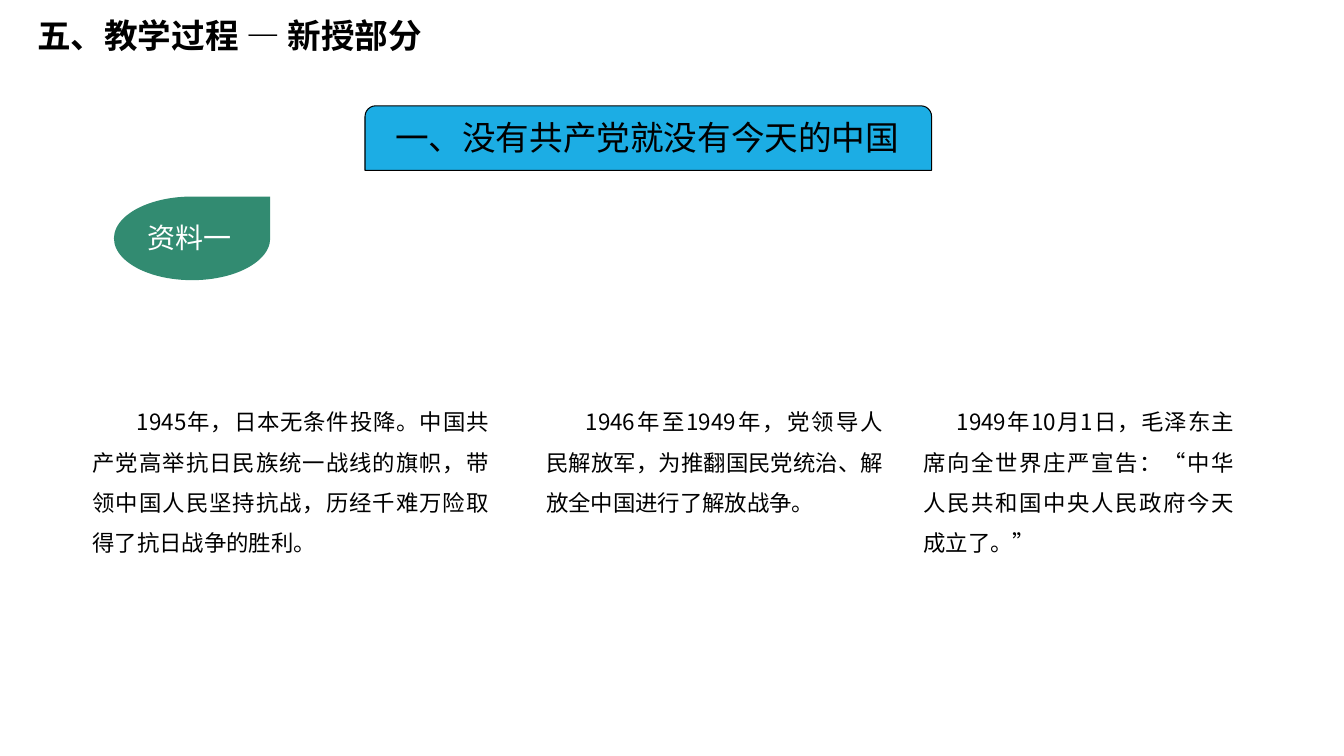
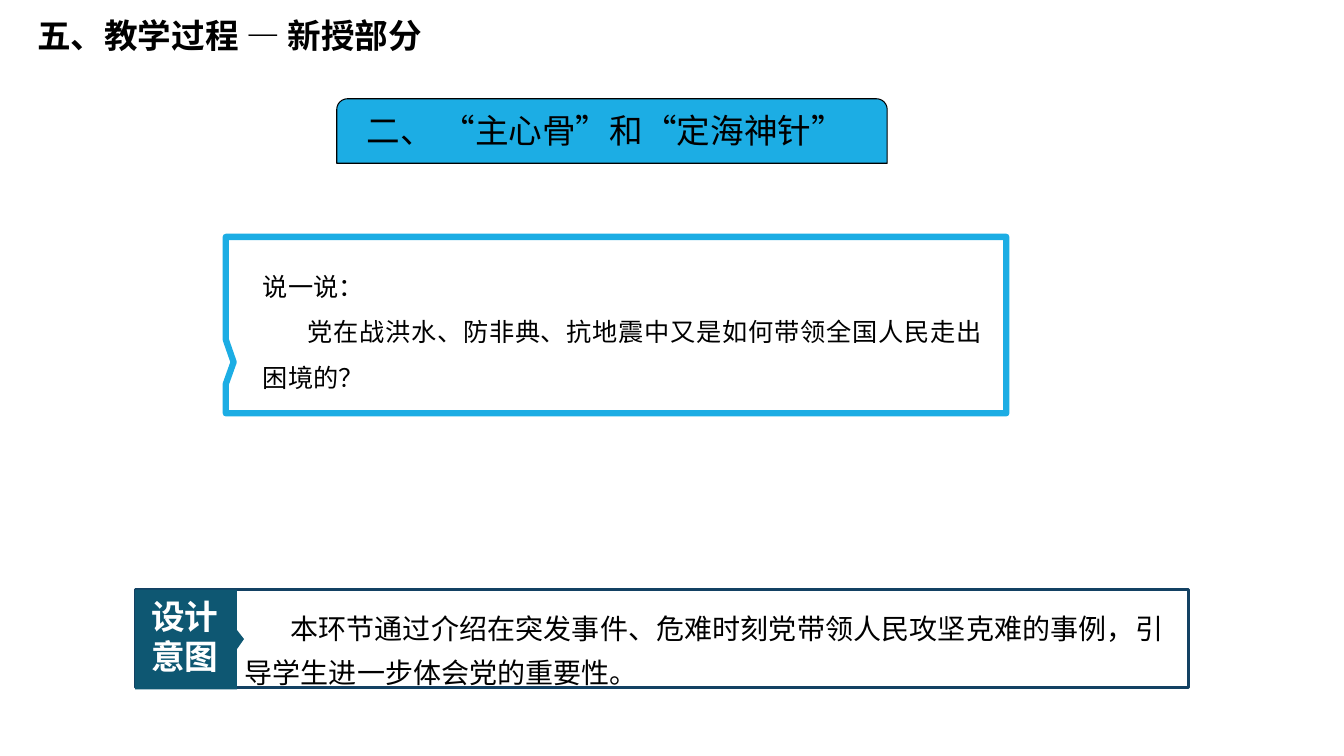
"""Build two lesson slides on the new-teaching part of a history class."""
from dataclasses import dataclass
from typing import Optional

from pptx import Presentation
from pptx import util as u
from pptx.dml.color import RGBColor
from pptx.enum import lang, shapes, text
from pptx.oxml import ns

FONT = "Noto Sans CJK SC"
TITLE = "五、教学过程 — 新授部分"
COLORS = {
    "black": "000000",
    "white": "FFFFFF",
    "sky": "1CADE4",
    "green": "328B71",
    "teal": "0E5772",
    "navy": "134163",
}


@dataclass(frozen=True)
class Frame:
    left: float
    top: float
    width: float
    height: float

    def lengths(self) -> tuple:
        return tuple(map(u.Inches, (self.left, self.top, self.width, self.height)))


@dataclass(frozen=True)
class Line:
    words: str
    indent: float = 0


@dataclass(frozen=True)
class Style:
    size: int
    color: str = "black"
    bold: bool = False
    spacing: float = 1.0
    justify: bool = False


@dataclass(frozen=True)
class Column:
    left: float
    width: float
    height: float
    line: Line


HEADING = Style(24)
COLUMN_TOP = 3.87
COLUMNS = (
    Column(0.82, 4.13, 1.72, Line(
        "1945年，日本无条件投降。中国共产党高举抗日民族统一战线的旗帜，"
        "带领中国人民坚持抗战，历经千难万险取得了抗日战争的胜利。", 0.44)),
    Column(5.32, 3.54, 1.31, Line(
        "1946年至1949年，党领导人民解放军，为推翻国民党统治、"
        "解放全中国进行了解放战争。", 0.39)),
    Column(9.06, 3.28, 1.72, Line(
        "1949年10月1日，毛泽东主席向全世界庄严宣告：“中华人民共和国"
        "中央人民政府今天成立了。”", 0.33)),
)


def rgb(name: str) -> RGBColor:
    return RGBColor.from_string(COLORS[name])


def paint(shape, fill: Optional[str], line: Optional[str] = None, weight: float = 0) -> None:
    shape.shadow.inherit = False
    if fill:
        shape.fill.solid()
        shape.fill.fore_color.rgb = rgb(fill)
    else:
        shape.fill.background()
    if line:
        shape.line.color.rgb = rgb(line)
        shape.line.width = u.Pt(weight)
    else:
        shape.line.fill.background()


def add_box(page, frame: Frame, style: Style, *lines: Line) -> None:
    box = page.shapes.add_textbox(*frame.lengths())
    body = box.text_frame
    body.word_wrap = True
    body.auto_size = text.MSO_AUTO_SIZE.SHAPE_TO_FIT_TEXT
    for index, line in enumerate(lines):
        para = body.add_paragraph() if index else body.paragraphs[0]
        para.line_spacing = style.spacing
        para.alignment = text.PP_ALIGN.JUSTIFY if style.justify else text.PP_ALIGN.LEFT
        if line.indent:
            para._p.get_or_add_pPr().set("indent", str(u.Inches(line.indent)))
        span = para.add_run()
        span.text = line.words
        font = span.font
        font.size = u.Pt(style.size)
        font.bold = style.bold
        font.color.rgb = rgb(style.color)
        font.name = FONT
        font.language_id = lang.MSO_LANGUAGE_ID.SIMPLIFIED_CHINESE
        east_asian = span._r.get_or_add_rPr().makeelement(ns.qn("a:ea"), {"typeface": FONT})
        span._r.rPr.find(ns.qn("a:latin")).addnext(east_asian)


def add_preset(page, preset, frame: Frame, fill: Optional[str],
               line: Optional[str] = None, weight: float = 0):
    shape = page.shapes.add_shape(preset, *frame.lengths())
    paint(shape, fill, line, weight)
    return shape


def add_page(deck, heading: str, left: float, top: float, width: float):
    page = deck.slides.add_slide(deck.slide_layouts[6])
    add_box(page, Frame(0.27, 0.1, 4.13, 0.5), Style(24, bold=True), Line(TITLE))
    add_preset(page, shapes.MSO_SHAPE.ROUND_2_SAME_RECTANGLE,
               Frame(left, top, width, 0.64), "sky", "black", 0.75)
    add_box(page, Frame(left + 0.2, top + 0.06, width - 0.2, 0.5), HEADING, Line(heading))
    return page


def build_history(deck) -> None:
    page = add_page(deck, "一、没有共产党就没有今天的中国", 3.62, 1.05, 5.62)
    add_preset(page, shapes.MSO_SHAPE.TEAR, Frame(1.13, 1.95, 1.55, 0.83), "green")
    add_box(page, Frame(1.36, 2.14, 1.21, 0.44), Style(20, "white"), Line("资料一"))
    style = Style(16, spacing=1.5, justify=True)
    for column in COLUMNS:
        frame = Frame(column.left, COLUMN_TOP, column.width, column.height)
        add_box(page, frame, style, column.line)


def add_intent(page) -> None:
    add_preset(page, shapes.MSO_SHAPE.RECTANGLE,
               Frame(1.34, 5.85, 10.45, 0.97), "white", "navy", 2.25)
    outline = ((2.35, 5.85), (2.35, 6.25), (2.42, 6.34), (2.35, 6.44), (2.35, 6.84), (1.34, 6.84))
    builder = page.shapes.build_freeform(u.Inches(1.34), u.Inches(5.85))
    builder.add_line_segments([(u.Inches(x), u.Inches(y)) for x, y in outline])
    paint(builder.convert_to_shape(), "teal")
    add_box(page, Frame(1.4, 5.86, 0.95, 0.91), Style(24, "white", bold=True),
            Line("设计"), Line("意图"))
    add_box(page, Frame(2.33, 5.92, 9.31, 0.93), Style(20, spacing=1.3, justify=True),
            Line("本环节通过介绍在突发事件、危难时刻党带领人民攻坚克难的事例，"
                 "引导学生进一步体会党的重要性。", 0.45))


def build_discussion(deck) -> None:
    page = add_page(deck, "二、 “主心骨”和“定海神针”", 3.34, 0.98, 5.46)
    add_box(page, Frame(2.51, 2.49, 7.33, 1.41), Style(18, spacing=1.5, justify=True),
            Line("说一说："),
            Line("党在战洪水、防非典、抗地震中又是如何带领全国人民走出困境的？", 0.44))
    add_intent(page)
    callout = add_preset(page, shapes.MSO_SHAPE.RECTANGULAR_CALLOUT,
                         Frame(2.24, 2.35, 7.74, 1.75), None, "sky", 4.5)
    callout.adjustments[0] = -0.49
    callout.adjustments[1] = 0.21


def main() -> None:
    deck = Presentation()
    deck.slide_width = u.Inches(13.33)
    deck.slide_height = u.Inches(7.5)
    build_history(deck)
    build_discussion(deck)
    deck.save("out.pptx")


if __name__ == "__main__":
    main()
